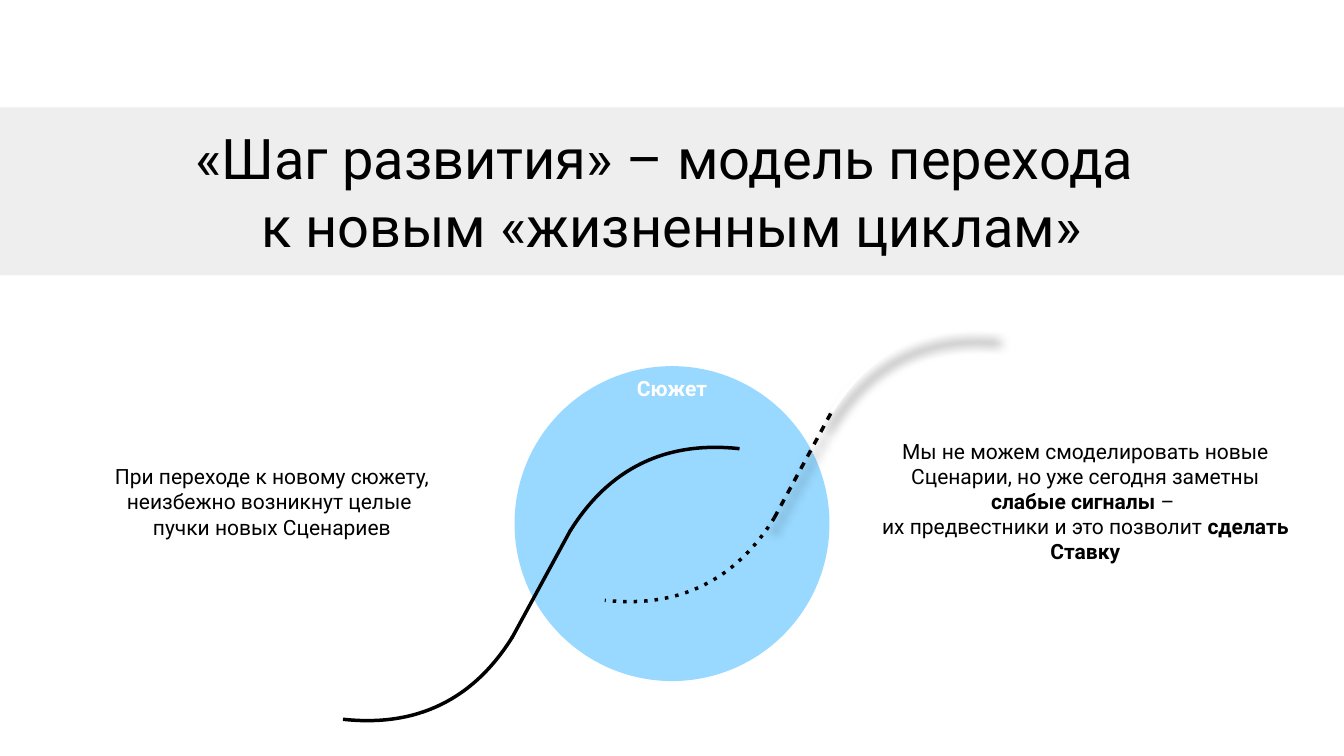
from lxml import etree
from pptx import Presentation, util as u
from pptx.dml.color import RGBColor
from pptx.enum import shapes, text
from pptx.oxml.ns import qn

BLACK = RGBColor(0x00, 0x00, 0x00)
WHITE = RGBColor(0xFF, 0xFF, 0xFF)
GREY = RGBColor(0x5E, 0x5E, 0x5E)
BLUE = RGBColor(0x00, 0xA2, 0xFF)
FONT = "Roboto"
BEND = [(56, -90), (137, -129), (242, -117.5)]
DASH = (200000, 200000)
DOT = (100000, 200000)


def apply(obj, vals):
    for key, val in vals.items():
        setattr(obj, key, val)


def sub(node, tag, **vals):
    return etree.SubElement(node, qn(tag), {k: str(v) for k, v in vals.items()})


def add_plate(parent, kind, box, color, alpha):
    plate = parent.add_shape(kind, *map(u.Pt, box))
    plate.shadow.inherit = False
    plate.fill.solid()
    plate.fill.fore_color.rgb = color
    tint = plate.fill._xPr.find(".//" + qn("a:srgbClr"))
    sub(tint, "a:alpha", val=alpha * 1000)
    plate.line.fill.background()


def add_label(parent, box, runs, size, color=BLACK, wrap=True):
    frame = parent.add_textbox(*map(u.Pt, box)).text_frame
    apply(frame, {
        "word_wrap": wrap, "vertical_anchor": text.MSO_ANCHOR.MIDDLE,
        "margin_left": u.Pt(4), "margin_right": u.Pt(4),
        "margin_top": u.Pt(4), "margin_bottom": u.Pt(4),
    })
    para = frame.paragraphs[0]
    para.alignment = text.PP_ALIGN.CENTER
    for words, bold in runs:
        for i, part in enumerate(words.split("\n")):
            if i:
                para.add_line_break()
            run = para.add_run()
            run.text = part
            apply(run.font, {"name": FONT, "size": u.Pt(size), "bold": bold})
            run.font.color.rgb = color


def style_line(item, color, dash, glow):
    item.line.color.rgb = color
    item.line.width = u.Pt(5)
    if dash:
        cust = sub(item.line._get_or_add_ln(), "a:custDash")
        sub(cust, "a:ds", d=dash[0], sp=dash[1])
    effect = sub(item._element.spPr, "a:effectLst")
    if glow:
        shade = sub(effect, "a:outerShdw", blurRad=u.Pt(16), dist=u.Pt(21.3),
                    dir=5400000, rotWithShape=0)
        tint = sub(shade, "a:srgbClr", val=str(BLACK))
        sub(tint, "a:alpha", val=60000)


def add_arc(parent, x, y, sign, color=BLACK, dash=None, glow=False):
    pts = [(u.Pt(x + sign * dx), u.Pt(y + sign * dy)) for dx, dy in BEND]
    pen = parent.build_freeform(u.Pt(x), u.Pt(y))
    pen.add_line_segments([pts[-1]], close=False)
    arc = pen.convert_to_shape()
    step = arc._element.spPr.find(".//" + qn("a:lnTo"))
    curve = etree.Element(qn("a:cubicBezTo"))
    for px, py in pts:
        sub(curve, "a:pt", x=px - arc.left, y=py - arc.top)
    step.getparent().replace(step, curve)
    arc.fill.background()
    style_line(arc, color, dash, glow)


def add_rise(parent, start, end, dash=None, glow=False):
    rise = parent.add_connector(shapes.MSO_CONNECTOR.STRAIGHT,
                                *map(u.Pt, start + end))
    style_line(rise, BLACK, dash, glow)


def main():
    deck = Presentation()
    apply(deck, {"slide_width": u.Pt(1920), "slide_height": u.Pt(1080)})
    root = deck.slides.add_slide(deck.slide_layouts[6]).shapes
    kind = shapes.MSO_SHAPE

    add_plate(root, kind.RECTANGLE, (0, 153.5, 1920, 240), GREY, 10)
    add_label(root, (133, 173.5, 1654, 199), [
        ("«Шаг развития» – модель перехода \nк новым «жизненным циклам»", False),
    ], 80)

    plot = root.add_group_shape().shapes
    add_plate(plot, kind.OVAL, (735, 523, 450, 450), BLUE, 40)
    add_label(plot, (903.5, 533, 113, 44), [("Сюжет", True)], 30, WHITE, False)

    add_label(root, (92, 657.5, 593, 118), [
        ("При переходе к новому сюжету, неизбежно возникнут целые \n"
         "пучки новых Сценариев", False),
    ], 30)
    add_label(root, (1254, 620, 593, 192), [
        ("Мы не можем смоделировать новые Сценарии, но уже сегодня заметны ",
         False),
        ("слабые сигналы", True),
        (" – \nих предвестники и это позволит ", False),
        ("сделать Ставку", True),
    ], 30)

    cycle = root.add_group_shape().shapes
    add_arc(cycle, 814.5, 758.5, 1)
    add_rise(cycle, (731.5, 911), (815, 757.5))
    add_arc(cycle, 732, 910, -1)

    add_arc(root, 1188, 588, 1, WHITE, glow=True)
    add_rise(root, (1106, 740), (1188.5, 587.5), DASH, True)
    add_arc(root, 1106, 740, -1, dash=DOT)
    deck.save("out.pptx")


if __name__ == "__main__":
    main()
